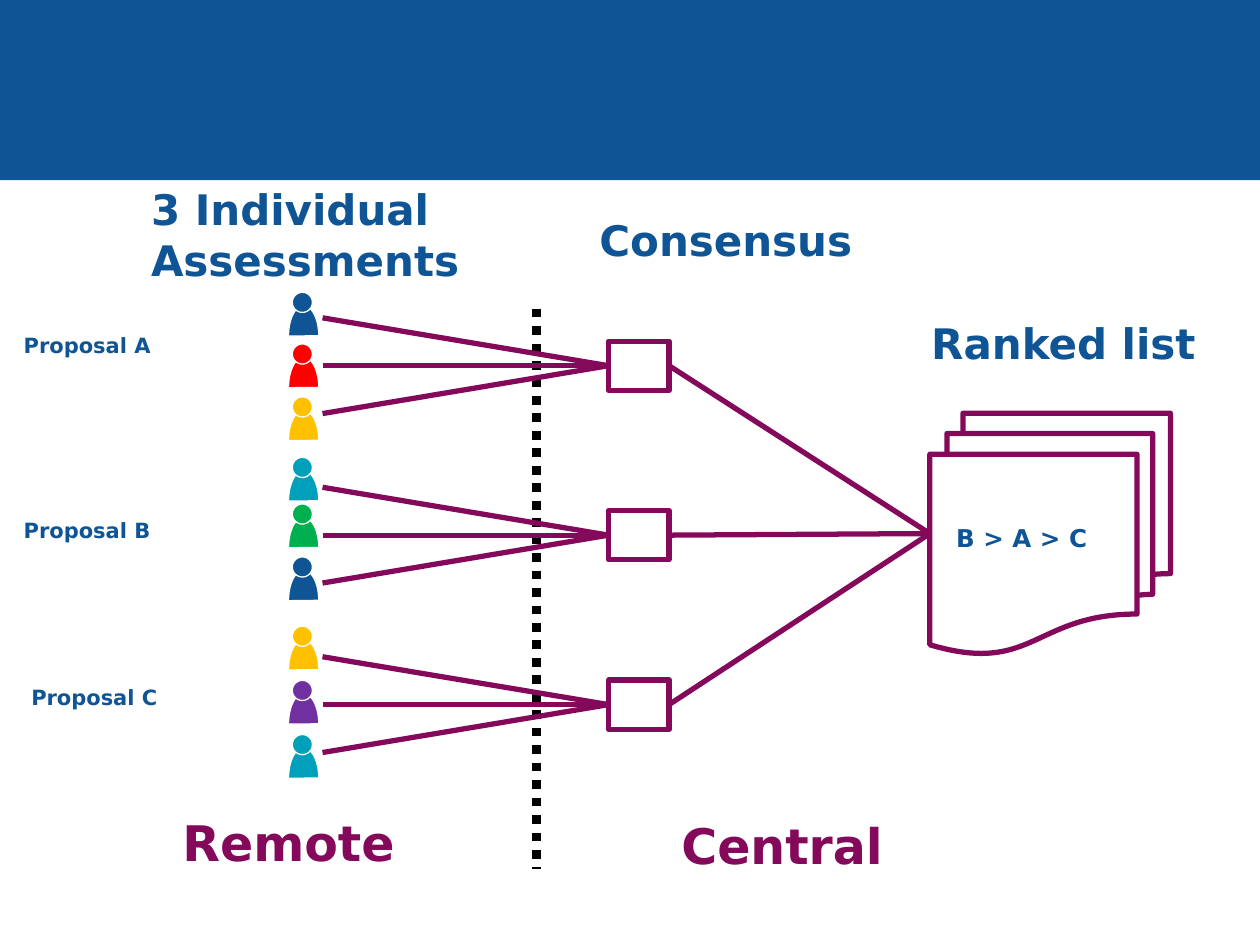
import pptx
import pptx.util
import pptx.dml.color
import pptx.enum.dml
import pptx.enum.shapes
import pptx.enum.text
import pptx.oxml
import pptx.oxml.ns

RGB = pptx.dml.color.RGBColor
KIND = pptx.enum.shapes.MSO_SHAPE
ALIGN = pptx.enum.text.PP_ALIGN

BLUE = RGB(0x0F, 0x54, 0x94)
PLUM = RGB(0x84, 0x09, 0x5B)
RED = RGB(0xFF, 0x00, 0x00)
GOLD = RGB(0xFF, 0xC0, 0x00)
TEAL = RGB(0x00, 0x9F, 0xBA)
GREEN = RGB(0x00, 0xB0, 0x50)
VIOLET = RGB(0x70, 0x30, 0xA0)
BLACK = RGB(0x00, 0x00, 0x00)
WHITE = RGB(0xFF, 0xFF, 0xFF)

FONT = "DejaVu Sans"
COLS, ROWS = 100, 75
CELL = pptx.util.Inches(0.1)

# Proposal, its colours, the rows of the heads and the label's place,
# all counted from the top left of the proposal's lane.
LANES = [
    ("Proposal A", (BLUE, RED, GOLD), (0.9, 5, 9.2), (0.9, 3.6)),
    ("Proposal B", (TEAL, GREEN, BLUE), (0.55, 4.25, 8.45), (0.9, 4.85)),
    ("Proposal C", (GOLD, VIOLET, TEAL), (0.5, 4.8, 9.1), (1.5, 4.6)),
]
TOP, PITCH = 22.3, 13.45


def grid(*cells):
    return [round(cell * CELL) for cell in cells]


def text(slide, box, words, size=12, color=BLUE, align=ALIGN.LEFT):
    frame = slide.shapes.add_textbox(*grid(*box)).text_frame
    frame.word_wrap = True
    frame.auto_size = pptx.enum.text.MSO_AUTO_SIZE.SHAPE_TO_FIT_TEXT
    para = frame.paragraphs[0]
    para.alignment = align
    run = para.add_run()
    run.text = words
    run.font.name = FONT
    run.font.size = pptx.util.Pt(size)
    run.font.bold = True
    run.font.color.rgb = color


def shape(host, kind, box, fill=None, line=None, width=3):
    item = host.shapes.add_shape(kind, *grid(*box))
    item.shadow.inherit = False
    if fill is None:
        item.fill.background()
    else:
        item.fill.solid()
        item.fill.fore_color.rgb = fill
    if line is None:
        item.line.fill.background()
    else:
        item.line.color.rgb = line
        item.line.width = pptx.util.Pt(width)
    return item


def link(slide, start, end, color=PLUM, width=3):
    """Draw a straight line; each end is a point or a (shape, side) pair."""
    points = [(0, 0) if hasattr(e[0], "shape_id") else e for e in (start, end)]
    item = slide.shapes.add_connector(
        pptx.enum.shapes.MSO_CONNECTOR.STRAIGHT, *grid(*points[0], *points[1]))
    if hasattr(start[0], "shape_id"):
        item.begin_connect(*start)
    if hasattr(end[0], "shape_id"):
        item.end_connect(*end)
    item.line.color.rgb = color
    item.line.width = pptx.util.Pt(width)
    props = item._element.spPr
    props.append(pptx.oxml.parse_xml(
        "<a:effectLst %s/>" % pptx.oxml.ns.nsdecls("a")))
    return item


def person(slide, left, top, color):
    group = slide.shapes.add_group_shape()
    body = shape(group, KIND.CHORD, (left, top + 1.05, 2.4, 4.8),
                 color, WHITE, 0.75)
    body.adjustments[0] = 107.342
    body.adjustments[1] = 215.817
    shape(group, KIND.OVAL, (left + 0.3, top, 1.6, 1.6), color, WHITE, 0.75)


def lane(slide, left, top, pile, words, colors, heads, label):
    """Place one proposal: its label, three people and their panel."""
    mid = top + PITCH / 2
    text(slide, (left + label[0], top + label[1], 13.7, 3), words)
    panel = shape(slide, KIND.FLOWCHART_PROCESS,
                  (left + 48.3, mid - 1.95, 4.8, 3.9), line=PLUM)
    for step, (color, head) in enumerate(zip(colors, heads), -1):
        link(slide, (left + 25.6, mid + 3.8 * step), (panel, 1))
        person(slide, left + 22.9, top + head, color)
    link(slide, (panel, 3), (pile, 1))


def ranking(slide, left, top, side):
    pile = shape(slide, KIND.FLOWCHART_MULTIDOCUMENT,
                 (left, top, side, side), line=PLUM)
    text(slide, (left + 1.1, top + 8.2, 13.2, 3.4), "B > A > C", size=14)
    return pile


def heads(slide, top):
    text(slide, (11, top, 26.8, 9.1), "3 Individual Assessments", size=24)
    text(slide, (43.9, top + 2.4, 27.4, 5), "Consensus", size=24,
         align=ALIGN.CENTER)
    text(slide, (70.8, top + 10.6, 27.2, 5.1), "Ranked list", size=24,
         align=ALIGN.CENTER)


def sites(slide, top):
    """Name the two sides of the process and divide them."""
    rule = link(slide, (42.6, 24.5), (42.6, 69), BLACK, 5)
    rule.line.dash_style = pptx.enum.dml.MSO_LINE.ROUND_DOT
    text(slide, (13.5, top, 24.3, 5.7), "Remote", size=28, color=PLUM)
    text(slide, (53.1, top + 0.2, 24.3, 5.7), "Central", size=28, color=PLUM)


def main():
    deck = pptx.Presentation()
    deck.slide_width, deck.slide_height = grid(COLS, ROWS)
    slide = deck.slides.add_slide(deck.slide_layouts[6])
    shape(slide, KIND.RECTANGLE, (0, 0, COLS, 14.3), BLUE)
    heads(slide, 14.1)
    sites(slide, 64)
    pile = ranking(slide, 73.8, 32.8, 19.1)
    for row, parts in enumerate(LANES):
        lane(slide, 0, TOP + row * PITCH, pile, *parts)
    deck.save("out.pptx")


if __name__ == "__main__":
    main()
